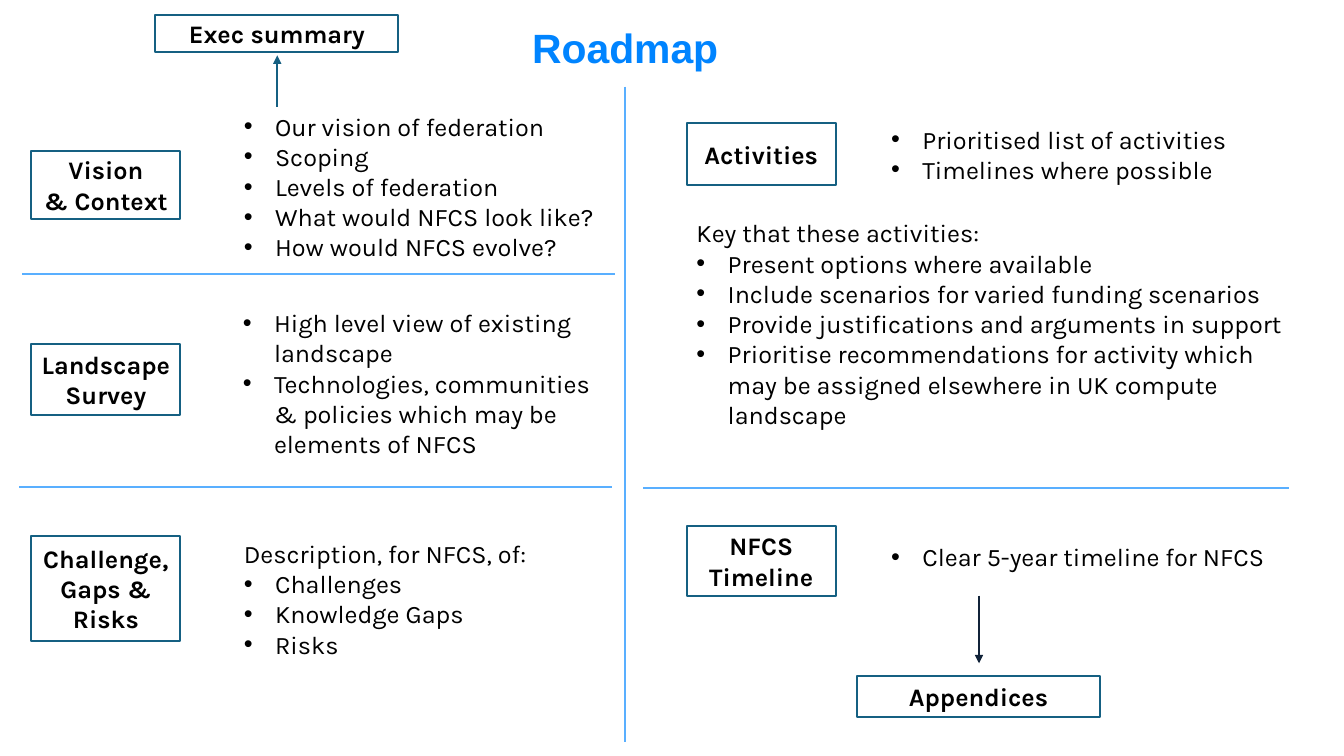
"""Build the Roadmap slide: labelled sections, bullet notes, dividers and arrows."""
import pptx
import pptx.dml.color
import pptx.enum.shapes
import pptx.enum.text
import pptx.oxml.ns
import pptx.util
from lxml import etree

PX = 9144
SLIDE = (1333, 750)
INDENT = 31
FONT = "Karla"
COLORS = {"title": "0084FF", "divider": "59AFFF", "border": "156082",
          "dark": "112339", "text": "000000", "white": "FFFFFF"}

TITLE = ("Roadmap", (518, 18, 208, 59))

LABELS = [
    (["Exec summary"], (154, 15, 241, 37)),
    (["Vision", "& Context"], (31, 150, 148, 67)),
    (["Landscape", "Survey"], (31, 341, 148, 71)),
    (["Challenge,", "Gaps & Risks"], (31, 532, 148, 104)),
    (["Activities"], (681, 122, 148, 62)),
    (["NFCS", "Timeline"], (681, 522, 148, 69)),
    (["Appendices"], (850, 671, 241, 40)),
]

NOTES = [
    (None, ["Our vision of federation", "Scoping", "Levels of federation",
            "What would NFCS look like?", "How would NFCS evolve?"],
     (232, 105, 376, 192)),
    (None, ["High level view of existing landscape",
            "Technologies, communities & policies which may be elements of NFCS"],
     (231, 300, 376, 162)),
    ("Description, for NFCS, of:", ["Challenges", "Knowledge Gaps", "Risks"],
     (232, 529, 376, 131)),
    (None, ["Prioritised list of activities", "Timelines where possible"],
     (874, 118, 376, 71)),
    ("Key that these activities:",
     ["Present options where available",
      "Include scenarios for varied funding scenarios",
      "Provide justifications and arguments in support",
      "Prioritise recommendations for activity which may be assigned "
      "elsewhere in UK compute landscape"],
     (681, 211, 606, 192)),
    (None, ["Clear 5-year timeline for NFCS"], (874, 532, 391, 40)),
]

DIVIDERS = [(620, 86, 620, 736), (22, 272, 610, 272),
            (19, 483, 607, 483), (638, 484, 1278, 484)]
ARROWS = [((275, 106, 275, 55), "border"), ((971, 591, 971, 658), "dark")]


def emu(lengths):
    return [n * PX for n in lengths]


def rgb(name):
    return pptx.dml.color.RGBColor.from_string(COLORS[name])


def add_run(p, text, size=18, font=FONT, color="text", bold=False):
    r = p.add_run()
    r.text = text
    r.font.size = pptx.util.Pt(size)
    r.font.name = font
    r.font.bold = bold
    r.font.color.rgb = rgb(color)


def add_text_box(s, box):
    tf = s.shapes.add_textbox(*emu(box)).text_frame
    tf.word_wrap = True
    return tf


def add_label(s, lines, box):
    sp = s.shapes.add_shape(pptx.enum.shapes.MSO_SHAPE.RECTANGLE, *emu(box))
    sp.shadow.inherit = False
    sp.fill.solid()
    sp.fill.fore_color.rgb = rgb("white")
    sp.line.color.rgb = rgb("border")
    sp.line.width = pptx.util.Pt(1.5)
    tf = sp.text_frame
    tf.word_wrap = True
    tf.vertical_anchor = pptx.enum.text.MSO_ANCHOR.MIDDLE
    p = tf.paragraphs[0]
    p.alignment = pptx.enum.text.PP_ALIGN.CENTER
    for i, line in enumerate(lines):
        if i:
            p.add_line_break()
        add_run(p, line, bold=True)


def add_bullet(p):
    pPr = p._p.get_or_add_pPr()
    pPr.set("marL", str(INDENT * PX))
    pPr.set("indent", str(-INDENT * PX))
    etree.SubElement(pPr, pptx.oxml.ns.qn("a:buFont"), typeface="Arial")
    etree.SubElement(pPr, pptx.oxml.ns.qn("a:buChar"), char="•")


def add_note(s, intro, bullets, box):
    tf = add_text_box(s, box)
    for i, text in enumerate(([intro] if intro else []) + bullets):
        p = tf.add_paragraph() if i else tf.paragraphs[0]
        if text != intro:
            add_bullet(p)
        add_run(p, text)


def add_line(s, ends, color, arrow=False):
    line = s.shapes.add_connector(pptx.enum.shapes.MSO_CONNECTOR.STRAIGHT, *emu(ends))
    line.line.color.rgb = rgb(color)
    line.line.width = pptx.util.Pt(1.5)
    if arrow:
        etree.SubElement(line.line._get_or_add_ln(),
                         pptx.oxml.ns.qn("a:tailEnd"), type="triangle")
    etree.SubElement(line._element.spPr, pptx.oxml.ns.qn("a:effectLst"))


def main():
    prs = pptx.Presentation()
    prs.slide_width, prs.slide_height = emu(SLIDE)
    s = prs.slides.add_slide(prs.slide_layouts[6])
    title, box = TITLE
    add_run(add_text_box(s, box).paragraphs[0], title, 29.2, "Arial", "title", True)
    for ends in DIVIDERS:
        add_line(s, ends, "divider")
    for lines, box in LABELS:
        add_label(s, lines, box)
    for ends, color in ARROWS:
        add_line(s, ends, color, arrow=True)
    for intro, bullets, box in NOTES:
        add_note(s, intro, bullets, box)
    prs.save("out.pptx")


if __name__ == "__main__":
    main()
